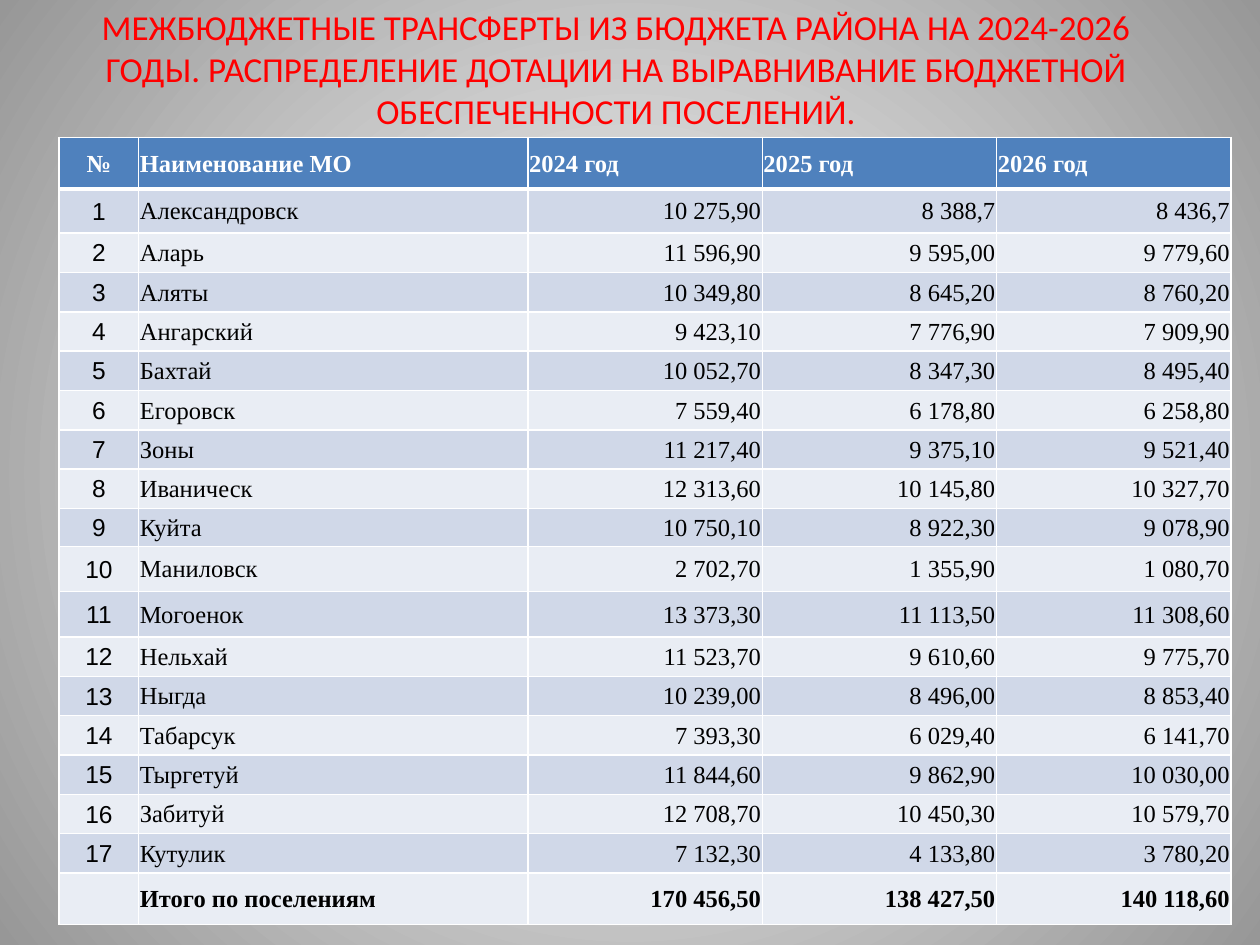
from dataclasses import dataclass

from lxml import etree
from pptx import Presentation
from pptx.dml.color import RGBColor
from pptx.enum.text import MSO_ANCHOR, MSO_AUTO_SIZE, PP_ALIGN
from pptx.oxml.ns import qn
from pptx.util import Inches, Pt

LEFT, CENTER, RIGHT = PP_ALIGN.LEFT, PP_ALIGN.CENTER, PP_ALIGN.RIGHT
MIDDLE = MSO_ANCHOR.MIDDLE
TITLE_ONLY = 5


@dataclass(frozen=True)
class Theme:
    title: str = "FF0000"
    header: str = "4F81BD"
    bands: tuple = ("D0D8E8", "E9EDF4")
    text: str = "000000"
    white: str = "FFFFFF"
    edge: str = "979797"
    title_font: str = "Calibri"
    table_font: str = "Times New Roman"
    number_font: str = "Arial"
    title_size: int = 20
    table_size: int = 14
    line: int = 1
    header_line: int = 3


THEME = Theme()

TITLE = (
    "МЕЖБЮДЖЕТНЫЕ ТРАНСФЕРТЫ ИЗ БЮДЖЕТА РАЙОНА НА 2024-2026 ГОДЫ. "
    "РАСПРЕДЕЛЕНИЕ ДОТАЦИИ НА ВЫРАВНИВАНИЕ БЮДЖЕТНОЙ ОБЕСПЕЧЕННОСТИ ПОСЕЛЕНИЙ."
)
HEADER = ("№", "Наименование МО", "2024 год", "2025 год", "2026 год")
SETTLEMENTS = [
    ("Александровск", "10 275,90", "8 388,7", "8 436,7"),
    ("Аларь", "11 596,90", "9 595,00", "9 779,60"),
    ("Аляты", "10 349,80", "8 645,20", "8 760,20"),
    ("Ангарский", "9 423,10", "7 776,90", "7 909,90"),
    ("Бахтай", "10 052,70", "8 347,30", "8 495,40"),
    ("Егоровск", "7 559,40", "6 178,80", "6 258,80"),
    ("Зоны", "11 217,40", "9 375,10", "9 521,40"),
    ("Иваническ", "12 313,60", "10 145,80", "10 327,70"),
    ("Куйта", "10 750,10", "8 922,30", "9 078,90"),
    ("Маниловск", "2 702,70", "1 355,90", "1 080,70"),
    ("Могоенок", "13 373,30", "11 113,50", "11 308,60"),
    ("Нельхай", "11 523,70", "9 610,60", "9 775,70"),
    ("Ныгда", "10 239,00", "8 496,00", "8 853,40"),
    ("Табарсук", "7 393,30", "6 029,40", "6 141,70"),
    ("Тыргетуй", "11 844,60", "9 862,90", "10 030,00"),
    ("Забитуй", "12 708,70", "10 450,30", "10 579,70"),
    ("Кутулик", "7 132,30", "4 133,80", "3 780,20"),
]
TOTAL = ("", "Итого по поселениям", "170 456,50", "138 427,50", "140 118,60")

TITLE_BOX = [Inches(n) for n in (0.39, -0.08, 9, 1.25)]
TABLE_BOX = [Inches(n) for n in (0.47, 1.09, 9.3, 6.25)]
NUMBER_WIDTH, NAME_WIDTH = Inches(0.63), Inches(3.09)
# Rows that differ from the even height shared by the others
SPECIAL_HEIGHTS = {
    row: Inches(height)
    for row, height in {0: 0.41, 1: 0.35, 9: 0.3, 10: 0.36, 11: 0.36, 18: 0.41}.items()
}


def paint_background(slide):
    """Fill the slide with a round gradient, light in the centre."""
    fill = slide.background.fill
    fill.gradient()
    for stop, color in zip(fill.gradient_stops, (THEME.white, THEME.edge)):
        stop.color.rgb = RGBColor.from_string(color)
    first, last = fill.gradient_stops
    first.position, last.position = 0, 1
    gradient = slide.element.find(".//" + qn("a:gradFill"))
    gradient.remove(gradient.find(qn("a:lin")))
    circle = etree.SubElement(gradient, qn("a:path"), {"path": "circle"})
    etree.SubElement(circle, qn("a:fillToRect"), dict.fromkeys("ltrb", "50000"))


def style_text(para, font, size, color, align, bold=False):
    para.alignment = align
    for target in [span.font for span in para.runs] or [para.font]:
        target.name, target.size, target.bold = font, Pt(size), bold
        target.color.rgb = RGBColor.from_string(color)


def place_title(slide, box):
    title = slide.shapes.title
    title.left, title.top, title.width, title.height = box
    frame = title.text_frame
    frame.text = TITLE
    frame.word_wrap = True
    frame.auto_size = MSO_AUTO_SIZE.NONE
    frame.vertical_anchor = MIDDLE
    style_text(frame.paragraphs[0], THEME.title_font, THEME.title_size, THEME.title, CENTER)


def set_borders(cell, top, bottom):
    properties = cell._tc.get_or_add_tcPr()
    widths = {"L": THEME.line, "R": THEME.line, "T": top, "B": bottom}
    for side, width in widths.items():
        line = etree.SubElement(properties, qn(f"a:ln{side}"), w=str(Pt(width)))
        solid = etree.SubElement(line, qn("a:solidFill"))
        etree.SubElement(solid, qn("a:srgbClr"), val=THEME.white)


def fill_cell(cell, text, row, column, last_row):
    is_header = row == 0
    set_borders(
        cell,
        top=THEME.header_line if row == 1 else THEME.line,
        bottom=THEME.header_line if is_header else THEME.line,
    )
    cell.fill.solid()
    band = THEME.header if is_header else THEME.bands[(row - 1) % 2]
    cell.fill.fore_color.rgb = RGBColor.from_string(band)
    cell.margin_left = cell.margin_right = cell.margin_top = Inches(0.01)
    cell.margin_bottom = 0
    cell.vertical_anchor = MIDDLE
    cell.text = text
    if column == 0:
        align = CENTER
    else:
        align = LEFT if is_header or column == 1 else RIGHT
    style_text(
        cell.text_frame.paragraphs[0],
        THEME.number_font if column == 0 and not is_header else THEME.table_font,
        THEME.table_size,
        THEME.white if is_header else THEME.text,
        align,
        bold=row in (0, last_row),
    )


def place_table(slide, box):
    numbered = [(str(n), *entry) for n, entry in enumerate(SETTLEMENTS, 1)]
    rows = [HEADER, *numbered, TOTAL]
    table = slide.shapes.add_table(len(rows), len(HEADER), *box).table
    width, height = box[2:]
    year_width = (width - NUMBER_WIDTH - NAME_WIDTH) // 3
    for column, size in zip(table.columns, (NUMBER_WIDTH, NAME_WIDTH, *[year_width] * 3)):
        column.width = size
    even_height = (height - sum(SPECIAL_HEIGHTS.values())) // (len(rows) - len(SPECIAL_HEIGHTS))
    for row, entry in enumerate(rows):
        table.rows[row].height = SPECIAL_HEIGHTS.get(row, even_height)
        for column, text in enumerate(entry):
            fill_cell(table.cell(row, column), text, row, column, len(rows) - 1)


def main():
    deck = Presentation()
    deck.slide_width, deck.slide_height = Inches(10), Inches(7.5)
    slide = deck.slides.add_slide(deck.slide_layouts[TITLE_ONLY])
    paint_background(slide)
    place_title(slide, TITLE_BOX)
    place_table(slide, TABLE_BOX)
    deck.save("out.pptx")


if __name__ == "__main__":
    main()
